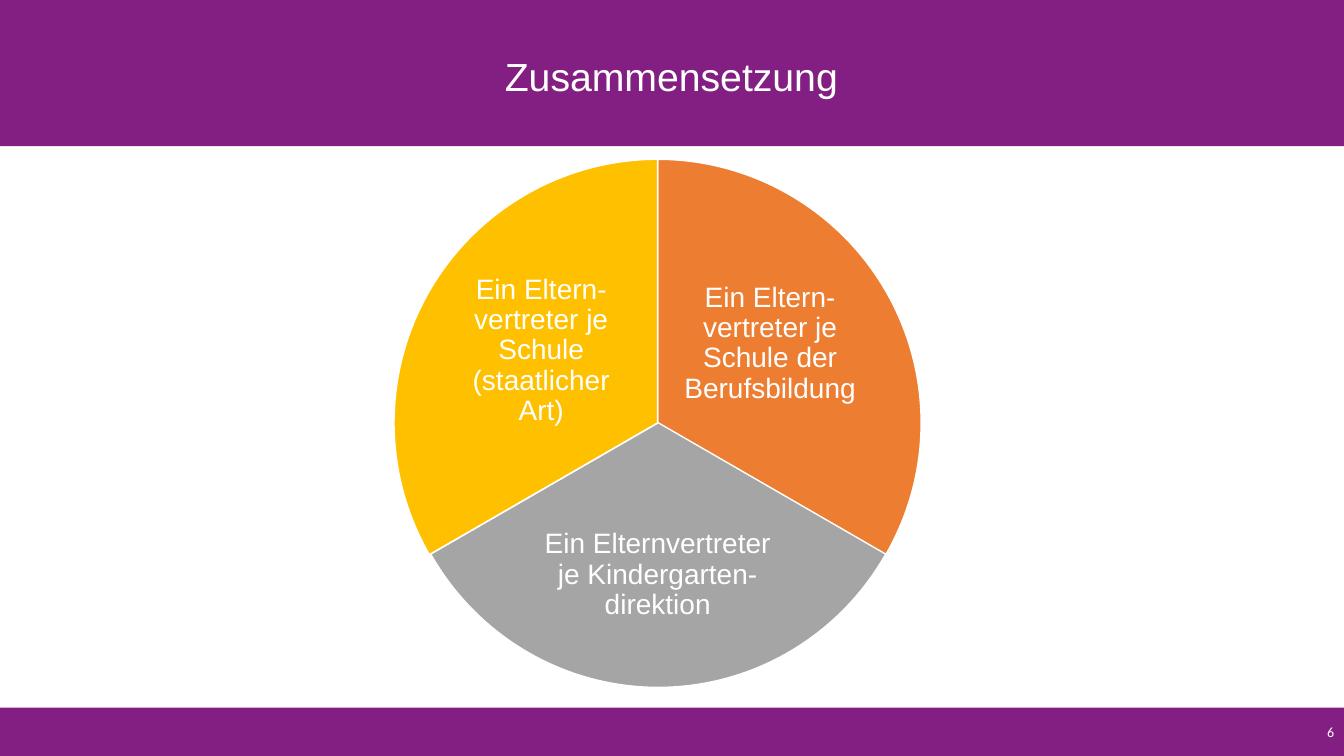
from pptx import Presentation
from pptx.dml.color import RGBColor
from pptx.enum.shapes import MSO_SHAPE
from pptx.enum.text import MSO_ANCHOR, PP_ALIGN
from pptx.util import Pt

RECTANGLE, PIE = MSO_SHAPE.RECTANGLE, MSO_SHAPE.PIE
MIDDLE = MSO_ANCHOR.MIDDLE
CENTER, RIGHT = PP_ALIGN.CENTER, PP_ALIGN.RIGHT

# Content
COLORS = {"purple": "831F82", "orange": "ED7D31", "gray": "A5A5A5",
          "yellow": "FFC000", "white": "FFFFFF"}
TITLE = "Zusammensetzung"
PAGE_NUMBER = "6"
# Text, colour, pie frame and label frame (left, top, width, height)
ROUND = (281.5, 113.8, 376.5, 376.5)
SECTORS = [
    ("Ein Eltern-vertreter je Schule der Berufsbildung", "orange",
     ROUND, (486, 182.9, 128.2, 125.3)),
    ("Ein Elternvertreter je Kindergarten-direktion", "gray",
     (283, 113, 374.4, 378), (385.2, 352.1, 169.2, 117.4)),
    ("Ein Eltern-vertreter je Schule (staatlicher Art)", "yellow",
     ROUND, (322.5, 187.9, 128.2, 125.3)),
]

# Layout
WIDTH, HEIGHT = 960, 540
HEADER_HEIGHT, FOOTER_HEIGHT = 104.4, 34.5
LABEL_INSET = 2
START_ANGLE = 270
SWEEP = 360 / len(SECTORS)
ANGLE_UNIT = 0.6  # adjustment value per degree

deck = Presentation()
deck.slide_width, deck.slide_height = Pt(WIDTH), Pt(HEIGHT)
page = deck.slides.add_slide(deck.slide_layouts[6])


def color(name):
    return RGBColor.from_string(COLORS[name])


def add_filled(kind, frame, fill, outlined=False):
    shape = page.shapes.add_shape(kind, *map(Pt, frame))
    shape.shadow.inherit = False
    shape.fill.solid()
    shape.fill.fore_color.rgb = color(fill)
    if outlined:
        shape.line.color.rgb = color("white")
        shape.line.width = Pt(1)
    else:
        shape.line.fill.background()
    return shape


def write(box, text, size, font="Arial", align=CENTER, spacing=1.0, after=0):
    frame = box.text_frame
    frame.word_wrap = True
    frame.vertical_anchor = MIDDLE
    para = frame.paragraphs[0]
    para.text = text
    para.alignment = align
    para.line_spacing = spacing
    para.space_after = Pt(after)
    para.font.name = font
    para.font.size = Pt(size)
    para.font.color.rgb = color("white")
    return frame


# Footer with page number, and header with title
footer = add_filled(RECTANGLE, (0, HEIGHT - FOOTER_HEIGHT, WIDTH, FOOTER_HEIGHT), "purple")
write(footer, PAGE_NUMBER, 10, font="Calibri", align=RIGHT)
add_filled(RECTANGLE, (0, 0, WIDTH, HEADER_HEIGHT), "purple")
title = page.shapes.add_textbox(Pt(169.2), Pt(0.7), Pt(620.6), Pt(HEADER_HEIGHT))
write(title, TITLE, 28, spacing=1.07, after=8)

# Circle of equal sectors, clockwise from the top
for index, (text, fill, pie_frame, label_frame) in enumerate(SECTORS):
    sector = add_filled(PIE, pie_frame, fill, outlined=True)
    for side in (0, 1):
        angle = (START_ANGLE + (index + side) * SWEEP) % 360
        sector.adjustments[side] = angle * ANGLE_UNIT
    label = page.shapes.add_textbox(*map(Pt, label_frame))
    frame = write(label, text, 20, spacing=0.9, after=7)
    frame.margin_left = frame.margin_right = Pt(LABEL_INSET)
    frame.margin_top = frame.margin_bottom = Pt(LABEL_INSET)

deck.save("out.pptx")
